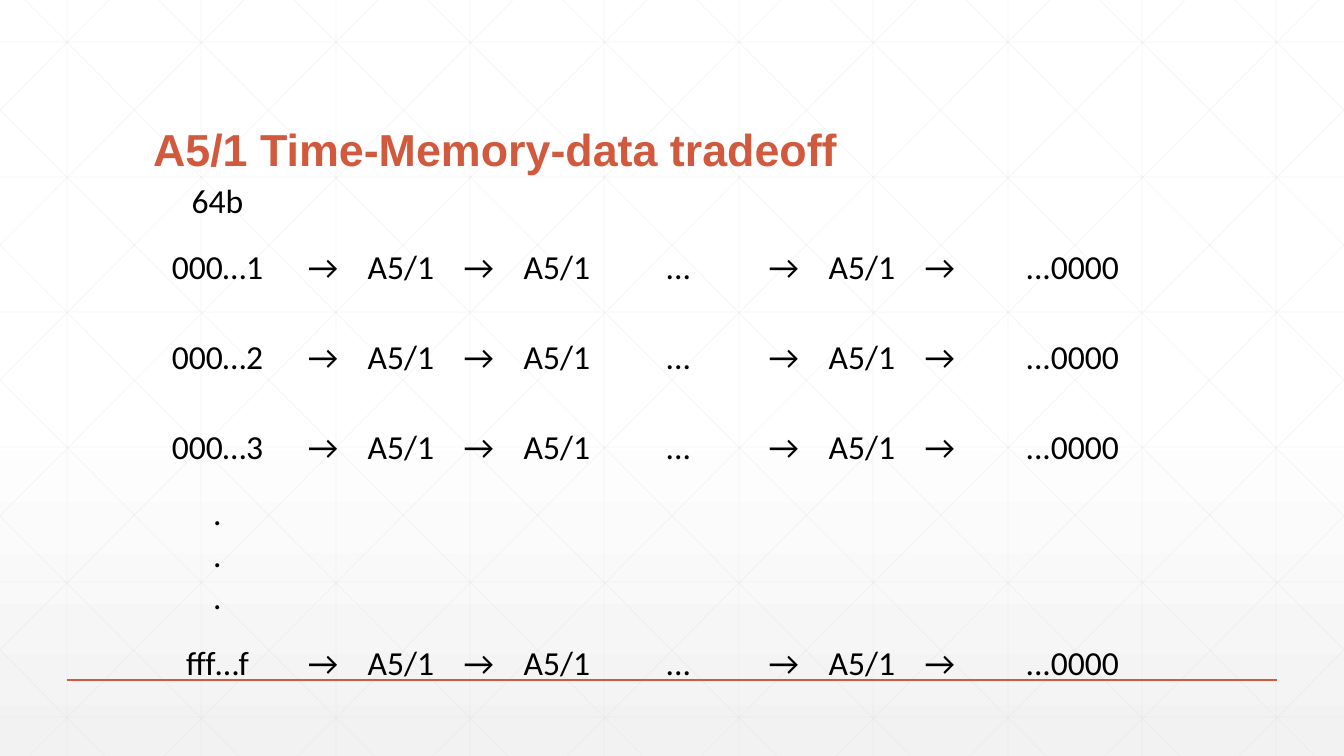
import dataclasses

import lxml.etree
import pptx
import pptx.dml.color
import pptx.enum.dml
import pptx.enum.shapes
import pptx.enum.text
import pptx.oxml.ns
import pptx.shapes.autoshape
import pptx.slide
import pptx.util

WIDTH, HEIGHT = 1344, 756
EMU_PER_PX = 12192000 / WIDTH

WHITE = pptx.dml.color.RGBColor(0xFF, 0xFF, 0xFF)
PALE = pptx.dml.color.RGBColor(0xF2, 0xF2, 0xF2)
GRID_GREY = pptx.dml.color.RGBColor(0xD9, 0xD9, 0xD9)
RUST = pptx.dml.color.RGBColor(0xD1, 0x5A, 0x3E)
BLACK = pptx.dml.color.RGBColor(0, 0, 0)

GRID_ROW_TOP, GRID_ROW_STEP = 42, 135
DIAGONAL_START, DIAGONAL_RUN = 25, 752

PLAIN_TABLE_STYLE = "{2D5ABB26-0587-4C30-8999-92F81FD0307C}"
COLUMN_WIDTHS = [149, 62, 94, 62, 94, 149, 62, 94, 62, 203]
CHAIN = ["→", "A5/1", "→", "A5/1", "...", "→", "A5/1", "→", "...0000"]


@dataclasses.dataclass
class Line:
    x1: int
    y1: int
    x2: int
    y2: int
    color: pptx.dml.color.RGBColor = GRID_GREY
    weight: float = 0.5
    opacity: int = 25


@dataclasses.dataclass
class TableRow:
    first: str
    height: int = 30
    chained: bool = False


ACCENT = Line(67, 680, 1277, 680, RUST, 1, 100)
ROWS = [
    TableRow("64b"),
    TableRow("000…1", 90, True),
    TableRow("000…2", 90, True),
    TableRow("000…3", 90, True),
    TableRow("."),
    TableRow("."),
    TableRow("."),
    TableRow("fff…f", 90, True),
]


def px(length: int) -> pptx.util.Emu:
    return pptx.util.Emu(round(length * EMU_PER_PX))


def write(para, text: str, *, font: str, size: int, color: pptx.dml.color.RGBColor,
          bold: bool = False, align=pptx.enum.text.PP_ALIGN.LEFT) -> None:
    para.alignment = align
    span = para.add_run()
    span.text = text
    span.font.name = font
    span.font.size = pptx.util.Pt(size)
    span.font.bold = bold
    span.font.color.rgb = color


def draw_line(shapes, line: Line) -> None:
    connector = shapes.add_connector(
        pptx.enum.shapes.MSO_CONNECTOR.STRAIGHT,
        px(line.x1), px(line.y1), px(line.x2), px(line.y2))
    connector.line.color.rgb = line.color
    connector.line.width = pptx.util.Pt(line.weight)
    if line.opacity < 100:
        color = connector.element.xpath(".//a:ln//a:srgbClr")[0]
        alpha = lxml.etree.SubElement(color, pptx.oxml.ns.qn("a:alpha"))
        alpha.set("val", str(line.opacity * 1000))
    lxml.etree.SubElement(connector.element.spPr, pptx.oxml.ns.qn("a:effectLst"))


def grid_lines() -> list[Line]:
    columns = [WIDTH * (2 * index + 1) // 20 for index in range(10)]
    lines = [Line(x, 0, x, HEIGHT) for x in columns]
    lines += [Line(0, y, WIDTH, y) for y in range(GRID_ROW_TOP, HEIGHT, GRID_ROW_STEP)]
    slope = HEIGHT / DIAGONAL_RUN
    for index in range(-5, 10):
        start = DIAGONAL_START + round(index * WIDTH / 10)
        left, right = max(start, 0), min(start + DIAGONAL_RUN, WIDTH)
        top, bottom = round((left - start) * slope), round((right - start) * slope)
        lines.append(Line(left, top, right, bottom))
        lines.append(Line(WIDTH - left, top, WIDTH - right, bottom))
    return lines


def paint_background(page: pptx.slide.Slide) -> None:
    fill = page.background.fill
    fill.gradient()
    fill.gradient_angle = 270
    for stop, position, color in zip(fill.gradient_stops, (0.53, 1), (WHITE, PALE)):
        stop.position = position
        stop.color.rgb = color


def place_title(page: pptx.slide.Slide) -> None:
    title = page.shapes.title
    title.left, title.top, title.width, title.height = px(143), px(55), px(1058), px(126)
    frame = title.text_frame
    frame.auto_size = pptx.enum.text.MSO_AUTO_SIZE.NONE
    frame.vertical_anchor = pptx.enum.text.MSO_ANCHOR.BOTTOM
    para = frame.paragraphs[0]
    para.line_spacing = 0.9
    write(para, "A5/1 Time-Memory-data tradeoff", font="Arial", size=32, color=RUST, bold=True)
    title.element.getparent().append(title.element)


def add_chain_table(page: pptx.slide.Slide) -> None:
    frame = page.shapes.add_table(
        len(ROWS), len(COLUMN_WIDTHS), px(143), px(181),
        px(sum(COLUMN_WIDTHS)), px(sum(row.height for row in ROWS)))
    frame.element.xpath(".//a:tableStyleId")[0].text = PLAIN_TABLE_STYLE
    table = frame.table
    table.first_row = table.horz_banding = False
    for column, width in zip(table.columns, COLUMN_WIDTHS):
        column.width = px(width)
    for table_row, row in zip(table.rows, ROWS):
        table_row.height = px(row.height)
        texts = [row.first] + (CHAIN if row.chained else [""] * len(CHAIN))
        for cell, text in zip(table_row.cells, texts):
            cell.fill.background()
            cell.vertical_anchor = pptx.enum.text.MSO_ANCHOR.MIDDLE
            cell.margin_left = cell.margin_right = cell.margin_top = px(1)
            cell.margin_bottom = 0
            if text:
                write(cell.text_frame.paragraphs[0], text, font="Calibri", size=24,
                      color=BLACK, align=pptx.enum.text.PP_ALIGN.CENTER)


def main() -> None:
    deck = pptx.Presentation()
    deck.slide_width, deck.slide_height = px(WIDTH), px(HEIGHT)
    page = deck.slides.add_slide(deck.slide_layouts.get_by_name("Title Only"))
    paint_background(page)
    grid = page.shapes.add_group_shape()
    for line in grid_lines():
        draw_line(grid.shapes, line)
    draw_line(page.shapes, ACCENT)
    place_title(page)
    add_chain_table(page)
    deck.save("out.pptx")


if __name__ == "__main__":
    main()
